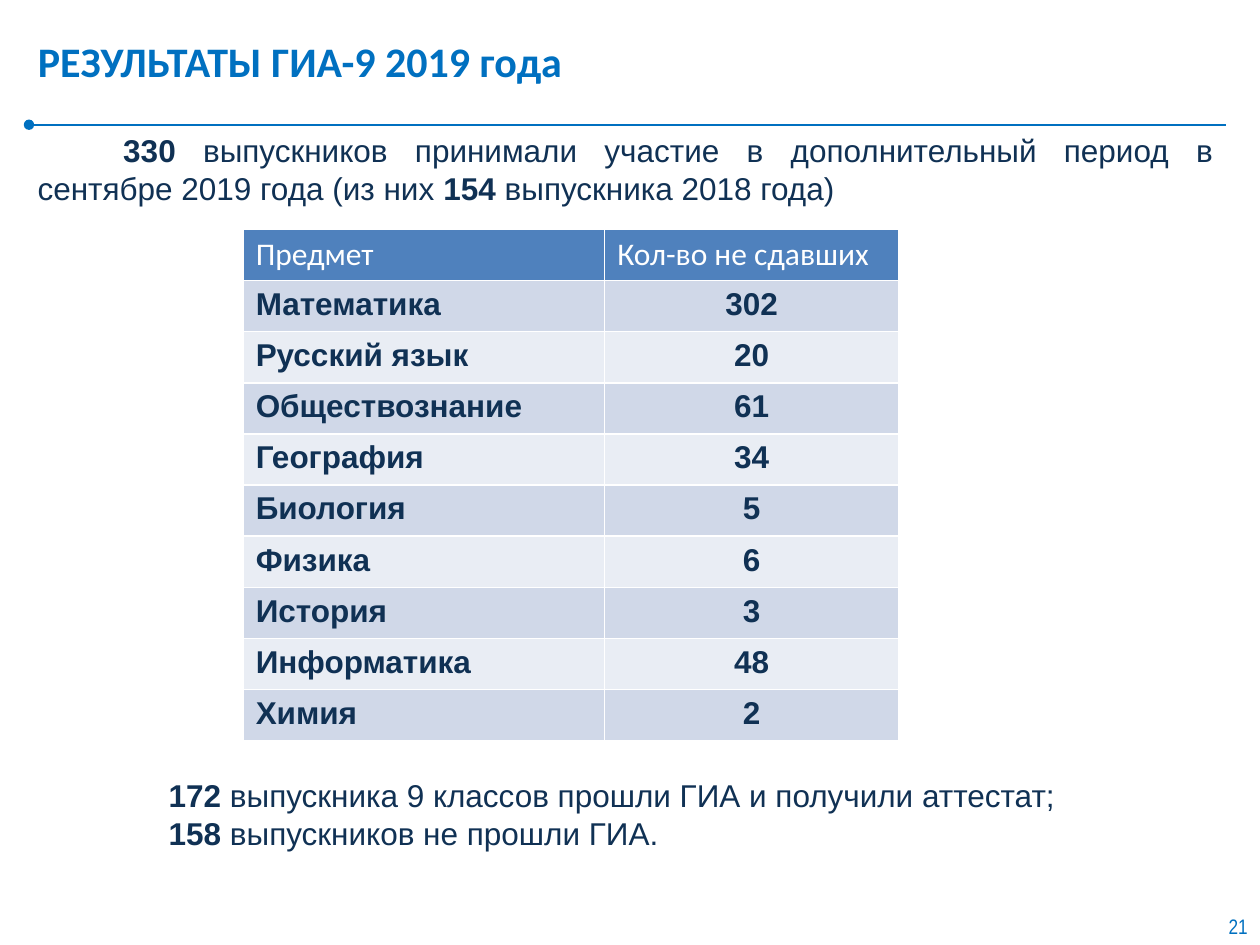
from lxml.etree import SubElement
from pptx import Presentation
from pptx.dml.color import RGBColor
from pptx.enum.shapes import MSO_CONNECTOR as Link
from pptx.enum.text import MSO_ANCHOR as Anchor, PP_ALIGN as Align
from pptx.oxml.ns import qn
from pptx.util import Inches, Pt

BLUE = RGBColor(0x00, 0x70, 0xC0)
NAVY = RGBColor(0x10, 0x31, 0x54)
WHITE = RGBColor(0xFF, 0xFF, 0xFF)
HEAD = RGBColor(0x4F, 0x81, 0xBD)
BANDS = [RGBColor(0xE9, 0xED, 0xF4), RGBColor(0xD0, 0xD8, 0xE8)]

TITLE = "РЕЗУЛЬТАТЫ ГИА-9 2019 года"
INTRO = [[
    ("330", True),
    (" выпускников принимали участие в дополнительный период в сентябре 2019 года (из них ", False),
    ("154", True),
    (" выпускника 2018 года)", False),
]]
ROWS = [
    ("Предмет", "Кол-во не сдавших"),
    ("Математика", "302"),
    ("Русский язык", "20"),
    ("Обществознание", "61"),
    ("География", "34"),
    ("Биология", "5"),
    ("Физика", "6"),
    ("История", "3"),
    ("Информатика", "48"),
    ("Химия", "2"),
]
TOTALS = [
    [("172", True), (" выпускника 9 классов прошли ГИА и получили аттестат;", False)],
    [("158", True), (" выпускников не прошли ГИА.", False)],
]
PAGE = [[("21", False)]]
COLS = [2.87, 2.33]
ROW_H = 0.406


def style(font, face, size, color, bold):
    font.name, font.size, font.bold = face, Pt(size), bold
    font.color.rgb = color


def add_text(slide, box, paras, align, indent=0, face="Arial", size=18, color=NAVY):
    frame = slide.shapes.add_textbox(*map(Inches, box)).text_frame
    frame.word_wrap = True
    for i, parts in enumerate(paras):
        para = frame.add_paragraph() if i else frame.paragraphs[0]
        para.alignment = align
        para._p.get_or_add_pPr().set("indent", str(Inches(indent)))
        for text, bold in parts:
            run = para.add_run()
            run.text = text
            style(run.font, face, size, color, bold)


def add_rule(slide):
    ends = map(Inches, (0.23, 0.99, 9.73, 0.99))
    rule = slide.shapes.add_connector(Link.STRAIGHT, *ends)
    rule.line.color.rgb = BLUE
    rule.line.width = Pt(1.25)
    SubElement(rule.line._get_or_add_ln(), qn("a:headEnd"), type="oval")
    SubElement(rule._element.spPr, qn("a:effectLst"))


def add_grid(slide):
    box = map(Inches, (1.93, 1.82, sum(COLS), ROW_H * len(ROWS)))
    table = slide.shapes.add_table(len(ROWS), len(COLS), *box).table
    for col, width in zip(table.columns, COLS):
        col.width = Inches(width)
    for r, row in enumerate(ROWS):
        for c, text in enumerate(row):
            cell = table.cell(r, c)
            cell.fill.solid()
            cell.fill.fore_color.rgb = BANDS[r % 2] if r else HEAD
            cell.text_frame.text = text
            para = cell.text_frame.paragraphs[0]
            para.alignment = Align.CENTER if r and c else Align.LEFT
            look = ("Arial", 18, NAVY, True) if r else ("Calibri", 18, WHITE, False)
            style(para.runs[0].font, *look)


def main():
    deck = Presentation()
    deck.slide_width, deck.slide_height = Inches(10), Inches(7.5)
    slide = deck.slides.add_slide(deck.slide_layouts[5])

    title = slide.shapes.title
    title.left, title.top, title.width, title.height = map(Inches, (0.2, 0.13, 9, 0.71))
    title.text_frame.text = TITLE
    title.text_frame.vertical_anchor = Anchor.MIDDLE
    para = title.text_frame.paragraphs[0]
    para.alignment = Align.LEFT
    style(para.runs[0].font, "Calibri", 24, BLUE, True)

    add_rule(slide)
    add_text(slide, (0.2, 0.99, 9.53, 0.75), INTRO, Align.JUSTIFY, 0.68)
    add_grid(slide)
    add_text(slide, (0.65, 6.11, 9.08, 0.71), TOTALS, Align.LEFT, 0.59)
    add_text(slide, (9.49, 7.2, 0.51, 0.3), PAGE, Align.RIGHT,
             face="Arial Narrow", size=12, color=BLUE)
    deck.save("out.pptx")


if __name__ == "__main__":
    main()
